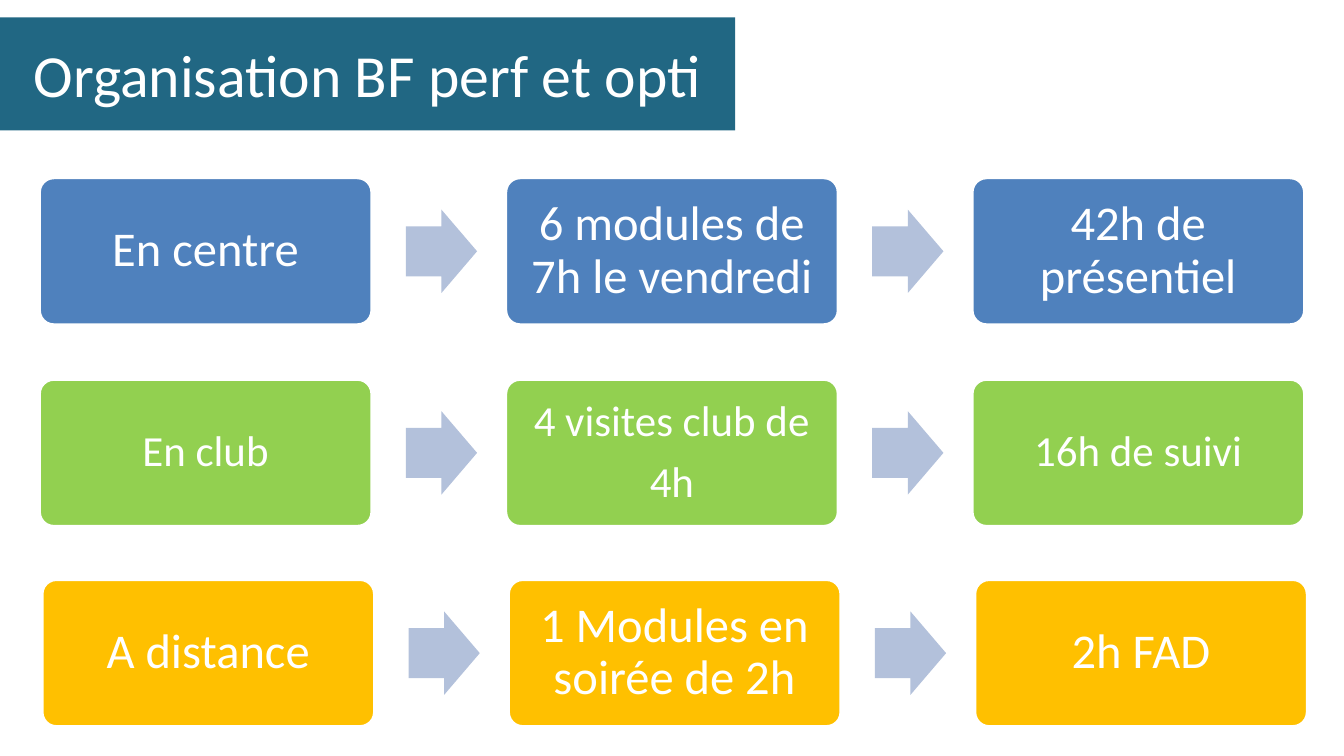
"""Build the slide on how the course is organised."""
import pptx
import pptx.util
import pptx.dml.color
import pptx.enum.shapes
import pptx.enum.text

TITLE = "Organisation BF perf et opti"
ROWS = [
    {"left": 0.29, "top": 1.32, "fill": "4F81BD", "size": 26, "pad": 0.11,
     "texts": ["En centre", "6 modules de 7h le vendredi", "42h de présentiel"]},
    {"left": 0.29, "top": 2.82, "fill": "92D050", "size": 23, "pad": 0.1,
     "texts": ["En club", "4 visites club de\n4h", "16h de suivi"]},
    {"left": 0.31, "top": 4.31, "fill": "FFC000", "size": 26, "pad": 0.11,
     "texts": ["A distance", "1 Modules en soirée de 2h", "2h FAD"]},
]
WHITE, TEAL, PALE = "FFFFFF", "216783", "B3C1DB"
BOX_W, BOX_H, STEP = 2.48, 1.1, 3.47
ARROW_W, ARROW_H, GAP = 0.53, 0.62, 0.25

Inches, Pt = pptx.util.Inches, pptx.util.Pt
KIND = pptx.enum.shapes.MSO_SHAPE


def color(code):
    """Turn a hex string into a colour."""
    return pptx.dml.color.RGBColor.from_string(code)


def paint(shape, code):
    """Fill a shape with one colour."""
    shape.fill.solid()
    shape.fill.fore_color.rgb = color(code)


def write(shape, text, size, pad=None):
    """Put centred white text in a shape."""
    frame = shape.text_frame
    frame.text = text
    frame.word_wrap = True
    frame.auto_size = pptx.enum.text.MSO_AUTO_SIZE.NONE
    frame.vertical_anchor = pptx.enum.text.MSO_ANCHOR.MIDDLE
    if pad:
        frame.margin_left = frame.margin_right = Inches(pad)
        frame.margin_top = frame.margin_bottom = Inches(pad)
    for para in frame.paragraphs:
        para.alignment = pptx.enum.text.PP_ALIGN.CENTER
        if pad:
            para.line_spacing = 0.9
            para.space_after = Pt(round(size * 0.35))
        for run in para.runs:
            run.font.name = "Calibri"
            run.font.size = Pt(size)
            run.font.color.rgb = color(WHITE)


def add(slide, kind, left, top, wide, high, code, adjust):
    """Add a filled preset shape."""
    shape = slide.shapes.add_shape(
        kind, Inches(left), Inches(top), Inches(wide), Inches(high))
    shape.shadow.inherit = False
    paint(shape, code)
    for spot, value in enumerate(adjust):
        shape.adjustments[spot] = value
    return shape


def draw(slide, row):
    """Draw one row of boxes with arrows between them."""
    last = len(row["texts"]) - 1
    for col, text in enumerate(row["texts"]):
        left = row["left"] + col * STEP
        box = add(slide, KIND.ROUNDED_RECTANGLE, left, row["top"],
                  BOX_W, BOX_H, row["fill"], [0.1])
        box.line.color.rgb = color(WHITE)
        box.line.width = Pt(2)
        write(box, text, row["size"], row["pad"])
        if col < last:
            arrow = add(slide, KIND.RIGHT_ARROW, left + BOX_W + GAP,
                        row["top"] + (BOX_H - ARROW_H) / 2,
                        ARROW_W, ARROW_H, PALE, [0.6, 0.5])
            arrow.line.fill.background()


def main():
    """Make and save the deck."""
    deck = pptx.Presentation()
    deck.slide_width = Inches(10)
    deck.slide_height = deck.slide_width * 9 // 16
    slide = deck.slides.add_slide(deck.slide_layouts[5])
    title = slide.shapes.title
    title.left, title.top = Inches(0), Inches(0.13)
    title.width, title.height = Inches(5.47), Inches(0.84)
    paint(title, TEAL)
    write(title, TITLE, 32)
    for row in ROWS:
        draw(slide, row)
    deck.save("out.pptx")


if __name__ == "__main__":
    main()
